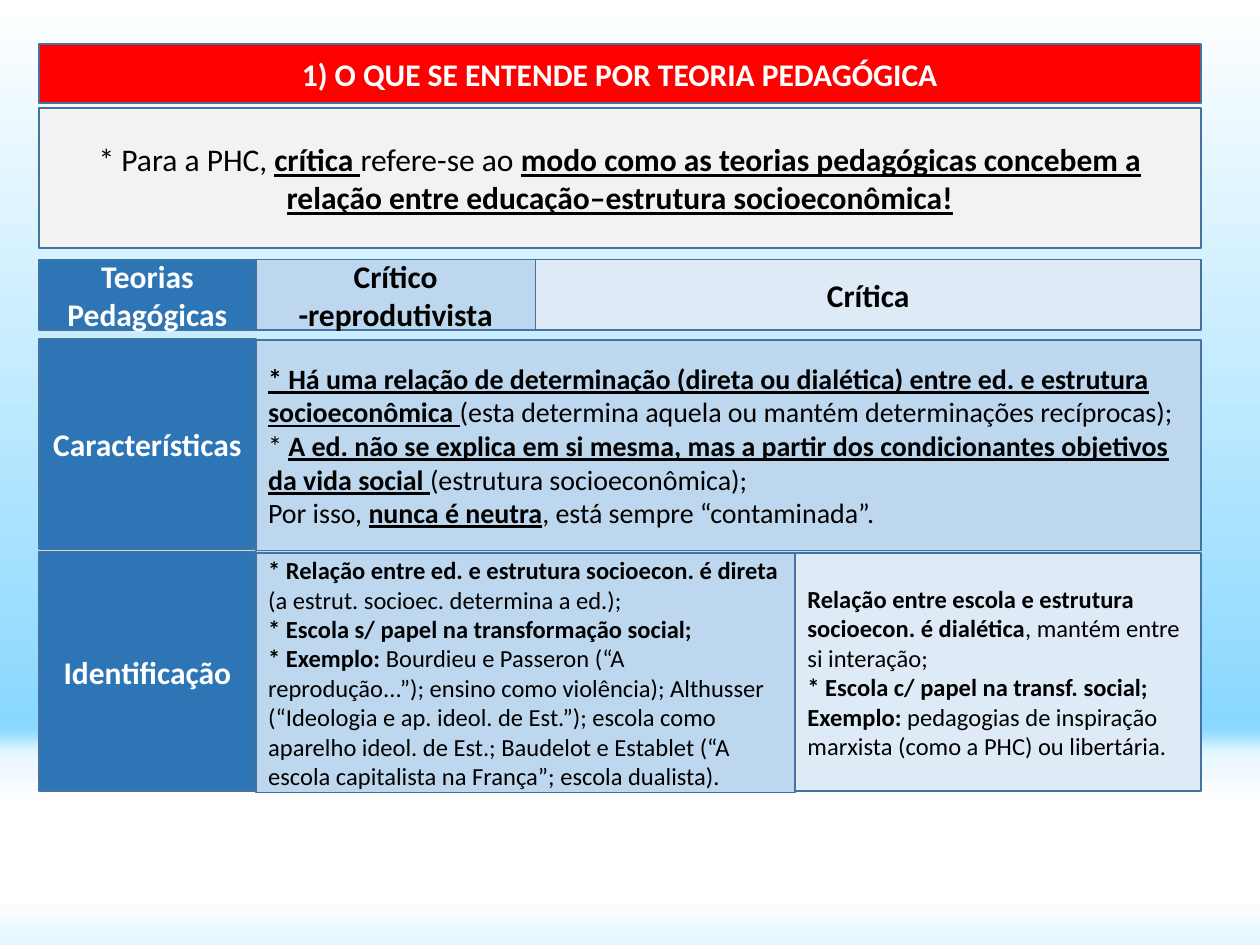
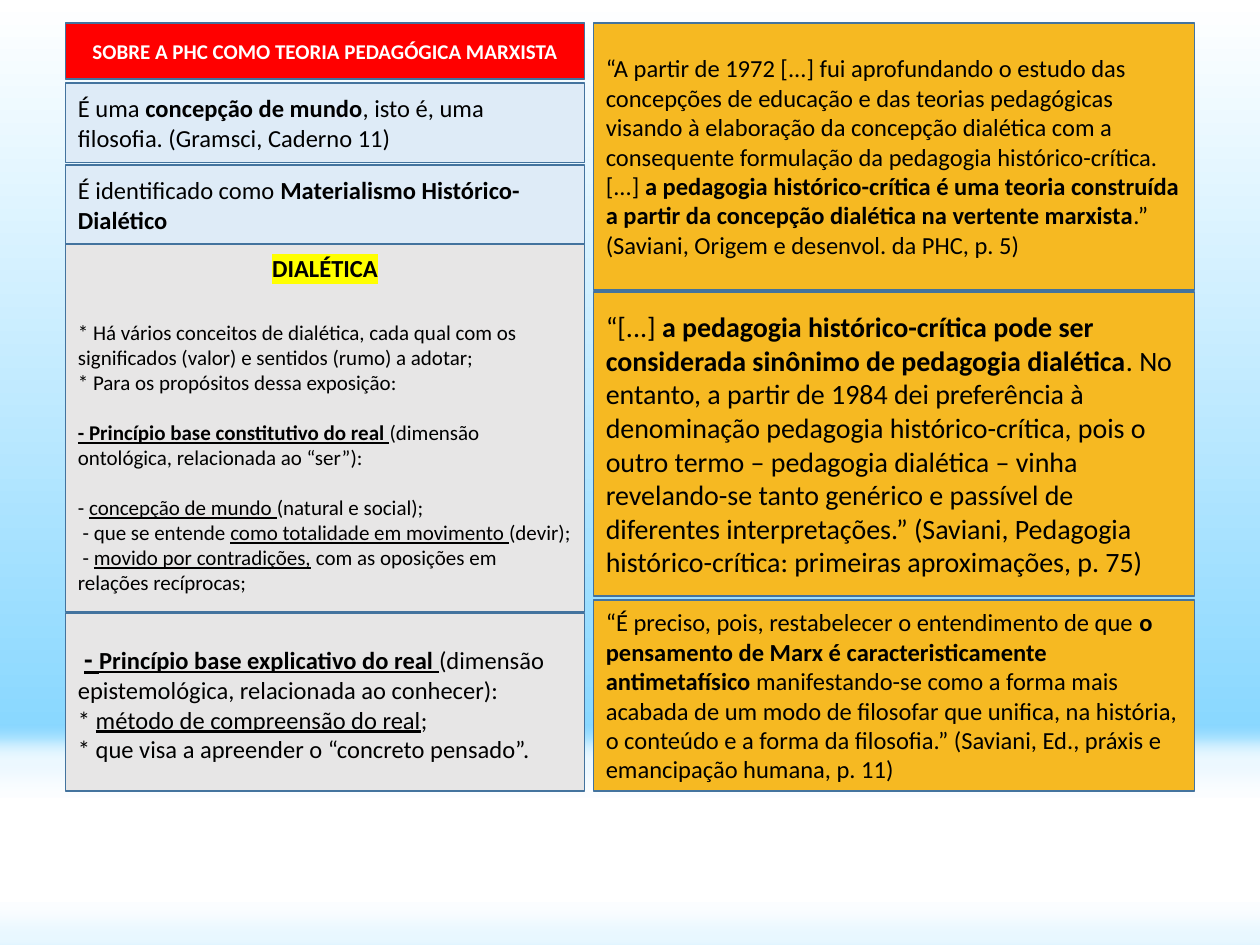
"""Build two slides on pedagogical theories and historical-critical pedagogy."""
import dataclasses

import lxml.etree
import pptx
import pptx.dml.color
import pptx.enum.shapes
import pptx.enum.text
import pptx.oxml.ns
import pptx.util

Inches, Pt = pptx.util.Inches, pptx.util.Pt
RGB = pptx.dml.color.RGBColor.from_string
RECT = pptx.enum.shapes.MSO_SHAPE.RECTANGLE
LEFT, CENTER = pptx.enum.text.PP_ALIGN.LEFT, pptx.enum.text.PP_ALIGN.CENTER
qn = pptx.oxml.ns.qn


@dataclasses.dataclass(frozen=True)
class Theme:
    font: str = "Calibri"
    white: str = "FFFFFF"
    black: str = "000000"
    sky: str = "66CCFF"
    red: str = "FF0000"
    border: str = "43739E"
    header: str = "2E75B6"
    blue: str = "BDD7EE"
    pale: str = "DEEBF7"
    light: str = "F2F2F2"
    gray: str = "E7E6E6"
    amber: str = "F6B922"
    marker: str = "FFFF00"
    large: int = 18
    medium: int = 16
    body: int = 14
    small: int = 12


T = Theme()


def add_runs(p, runs, size, color):
    """Add (text, style, size) runs; style letters: b bold, u underline, h highlight."""
    for text, style, *own_size in runs:
        r = p.add_run()
        r.text = text
        r.font.size = Pt(own_size[0] if own_size else size)
        r.font.bold = "b" in style
        r.font.underline = "u" in style
        r.font.color.rgb = RGB(color)
        r.font.name = T.font
        if "h" in style:
            mark = lxml.etree.Element(qn("a:highlight"))
            lxml.etree.SubElement(mark, qn("a:srgbClr"), val=T.marker)
            r.font.fill  # noqa
            r._r.rPr.find(qn("a:latin")).addprevious(mark)


def fill_box(sp, at, fill, size, paras, color=T.black, align=LEFT):
    """Place a box, style it and write its paragraphs."""
    sp.left, sp.top, sp.width, sp.height = map(Inches, at)
    sp.shadow.inherit = False
    sp.fill.solid()
    sp.fill.fore_color.rgb = RGB(fill)
    sp.line.color.rgb = RGB(T.border)
    sp.line.width = Pt(1)
    tf = sp.text_frame
    tf.word_wrap = True
    tf.auto_size = pptx.enum.text.MSO_AUTO_SIZE.NONE
    tf.vertical_anchor = pptx.enum.text.MSO_ANCHOR.MIDDLE
    for i, runs in enumerate(paras):
        p = tf.paragraphs[0] if i == 0 else tf.add_paragraph()
        p.alignment = align
        add_runs(p, runs, size, color)
    return tf


prs = pptx.Presentation()
prs.slide_width, prs.slide_height = Inches(10), Inches(7.5)
layout = prs.slide_layouts[5]
s1, s2 = [prs.slides.add_slide(layout) for _ in range(2)]

sky = s1.shapes.add_shape(RECT, 0, 0, prs.slide_width, prs.slide_height)
sky.fill.gradient()
sky.fill.gradient_angle = 90
for stop, color, position in zip(sky.fill.gradient_stops, (T.sky, T.white), (0, 1)):
    stop.color.rgb = RGB(color)
    stop.position = position
band = s1.shapes.add_shape(RECT, 0, Inches(6.33), prs.slide_width, Inches(0.83))
band.fill.solid()
band.fill.fore_color.rgb = RGB(T.white)
for i, sp in enumerate((sky, band)):
    sp.shadow.inherit = False
    sp.line.fill.background()
    prs.slide_master.shapes.element.insert(2 + i, sp.element)
effects = band.element.spPr.find(qn("a:effectLst"))
glow = lxml.etree.SubElement(effects, qn("a:glow"), rad=str(Inches(0.3)))
glow_color = lxml.etree.SubElement(glow, qn("a:srgbClr"), val=T.white)
lxml.etree.SubElement(glow_color, qn("a:alpha"), val="85000")

titles = [
    (s1, (0.31, 0.35, 9.22, 0.47), T.large, "1) O QUE SE ENTENDE POR TEORIA PEDAGÓGICA"),
    (s2, (0.52, 0.18, 4.12, 0.45), T.small, "SOBRE A PHC COMO TEORIA PEDAGÓGICA MARXISTA"),
]
for s, at, size, text in titles:
    fill_box(s.shapes.title, at, T.red, size, [[(text, "b")]], T.white, CENTER)

definition = [[
    ("* Para a PHC, ", ""), ("crítica ", "bu"), ("refere-se ao ", ""),
    ("modo como as teorias pedagógicas concebem a relação entre "
     "educação–estrutura socioeconômica!", "bu"),
]]
fill_box(s1.shapes.add_shape(RECT, 0, 0, 0, 0), (0.31, 0.86, 9.22, 1.11),
         T.light, T.large, definition, align=CENTER)

headings = [
    (0.31, 2.06, 1.72, 0.56, T.header, T.white, "Teorias Pedagógicas"),
    (4.25, 2.06, 5.28, 0.56, T.pale, T.black, "Crítica"),
    (2.03, 2.06, 2.22, 0.56, T.blue, T.black, "Crítico -reprodutivista"),
    (0.31, 2.69, 1.72, 1.67, T.header, T.white, "Características"),
    (0.31, 4.38, 1.72, 1.9, T.header, T.white, "Identificação"),
]
for *at, fill, color, text in headings:
    fill_box(s1.shapes.add_shape(RECT, 0, 0, 0, 0), at, fill, T.large,
             [[(text, "b")]], color, CENTER)

theory_cells = [
    ((2.03, 2.7, 7.5, 1.67), T.blue, T.medium, [
        [("* Há uma relação de determinação (direta ou dialética) entre ed. e "
          "estrutura socioeconômica ", "bu"),
         ("(esta determina aquela ou mantém determinações recíprocas);", "")],
        [("* ", ""),
         ("A ed. não se explica em si mesma, mas a partir dos condicionantes "
          "objetivos da vida social ", "bu"),
         ("(estrutura socioeconômica);", "")],
        [("Por isso, ", ""), ("nunca é neutra", "bu"),
         (", está sempre “contaminada”.", "")],
    ]),
    ((6.31, 4.39, 3.22, 1.89), T.pale, T.body, [
        [("Relação entre escola e estrutura socioecon. é dialética", "b"),
         (", mantém entre si interação;", "")],
        [("* Escola c/ papel na transf. social;", "b")],
        [("Exemplo:", "b"),
         (" pedagogias de inspiração marxista (como a PHC) ou libertária.", "")],
    ]),
    ((2.03, 4.39, 4.28, 1.9), T.blue, T.body, [
        [("* Relação entre ed. e estrutura socioecon. é direta", "b"),
         (" (a estrut. socioec. determina a ed.);", "")],
        [("* Escola s/ papel na transformação social;", "b")],
        [("* Exemplo: ", "b"),
         ("Bourdieu e Passeron (“A reprodução...”); ensino como violência); "
          "Althusser (“Ideologia e ap. ideol. de Est.”); escola como aparelho "
          "ideol. de Est.; Baudelot e Establet (“A escola capitalista na "
          "França”; escola dualista).", "")],
    ]),
]
for at, fill, size, paras in theory_cells:
    fill_box(s1.shapes.add_shape(RECT, 0, 0, 0, 0), at, fill, size, paras)

dialectic = [
    [("DIALÉTICA", "bh", T.body)],
    [("* Há vários conceitos de dialética, cada qual com os significados "
      "(valor) e sentidos (rumo) a adotar;", "")],
    [("* Para os propósitos dessa exposição:", "")],
    [("- Princípio base constitutivo do real ", "bu"),
     ("(dimensão ontológica, relacionada ao “ser”):", "")],
    [("- ", ""), ("concepção de mundo ", "u"), ("(natural e social);", "")],
    [(" - que se entende ", ""), ("como totalidade em movimento ", "u"),
     ("(devir);", "")],
    [(" - ", ""), ("movido por contradições,", "u"),
     (" com as oposições em relações recíprocas;", "")],
]
tf = fill_box(s2.shapes.add_shape(RECT, 0, 0, 0, 0), (0.52, 1.93, 4.12, 2.93),
              T.gray, T.small, dialectic)
tf.vertical_anchor = pptx.enum.text.MSO_ANCHOR.TOP
tf.margin_top = Inches(0.08)
tf.paragraphs[0].alignment = CENTER
for i, gap in ((1, 21), (3, 14), (4, 14)):
    tf.paragraphs[i].space_before = Pt(gap)

marxist_cells = [
    ((0.52, 0.66, 4.12, 0.63), T.pale, T.body, [
        [("É uma ", ""), ("concepção de mundo", "b"),
         (", isto é, uma filosofia. (Gramsci, Caderno 11)", "")],
    ]),
    ((0.52, 1.31, 4.12, 0.63), T.pale, T.body, [
        [("É identificado como ", ""), ("Materialismo Histórico-Dialético", "b")],
    ]),
    ((0.52, 4.87, 4.12, 1.41), T.gray, T.body, [
        [(" ", "", T.medium), ("- ", "bu", T.medium),
         ("Princípio base explicativo do real ", "bu"),
         ("(dimensão epistemológica, relacionada ao conhecer):", "")],
        [("* ", ""), ("método de compreensão do real", "u"), (";", "")],
        [("* que visa a apreender o “concreto pensado”.", "")],
    ]),
    ((4.71, 0.18, 4.77, 2.12), T.amber, T.body, [
        [("“A partir de 1972 [...] fui aprofundando o estudo das concepções de "
          "educação e das teorias pedagógicas visando à elaboração da concepção "
          "dialética com a consequente formulação da pedagogia "
          "histórico-crítica. [...] ", ""),
         ("a pedagogia histórico-crítica é uma teoria construída a partir da "
          "concepção dialética na vertente marxista", "b"),
         (".” (Saviani, Origem e desenvol. da PHC, p. 5)", "")],
    ]),
    ((4.71, 2.32, 4.77, 2.41), T.amber, T.medium, [
        [("“[...] ", ""),
         ("a pedagogia histórico-crítica pode ser considerada sinônimo de "
          "pedagogia dialética", "b"),
         (". No entanto, a partir de 1984 dei preferência à denominação "
          "pedagogia histórico-crítica, pois o outro termo – pedagogia "
          "dialética – vinha revelando-se tanto genérico e passível de "
          "diferentes interpretações.” (Saviani, Pedagogia histórico-crítica: "
          "primeiras aproximações, p. 75)", "")],
    ]),
    ((4.71, 4.76, 4.77, 1.52), T.amber, T.body, [
        [("“É preciso, pois, restabelecer o entendimento de que ", ""),
         ("o pensamento de Marx é caracteristicamente antimetafísico ", "b"),
         ("manifestando-se como a forma mais acabada de um modo de filosofar "
          "que unifica, na história, o conteúdo e a forma da filosofia.” "
          "(Saviani, Ed., práxis e emancipação humana, p. 11)", "")],
    ]),
]
for at, fill, size, paras in marxist_cells:
    fill_box(s2.shapes.add_shape(RECT, 0, 0, 0, 0), at, fill, size, paras)

prs.save("out.pptx")
